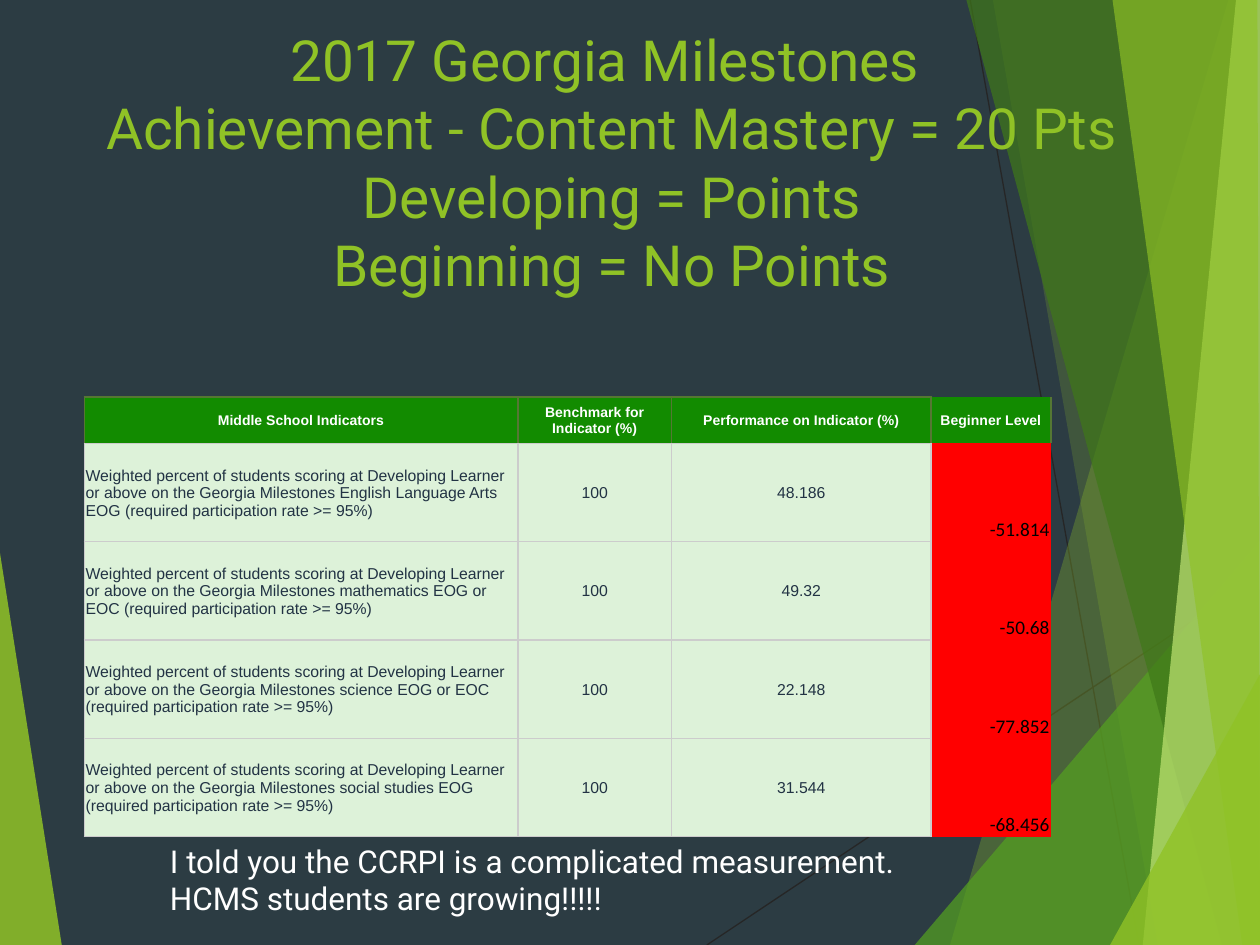
from lxml.etree import SubElement
from pptx import Presentation
from pptx.dml.color import RGBColor
from pptx.enum.shapes import MSO_CONNECTOR
from pptx.enum.text import MSO_ANCHOR, MSO_AUTO_SIZE, PP_ALIGN
from pptx.oxml import parse_xml
from pptx.oxml.ns import nsdecls, qn
from pptx.util import Inches, Pt

WIDTH, HEIGHT = 10, 7.5
BACKGROUND, LIME, WHITE = "2C3C43", "90C226", "FFFFFF"
GRID, HEADER_EDGE = "CCCCCC", "557733"

TITLE = [
    "2017 Georgia Milestones ",
    "Achievement - Content Mastery = 20 Pts",
    "Developing = Points",
    "Beginning = No Points",
]
CLOSING = ["I told you the CCRPI is a complicated measurement.", "HCMS students are growing!!!!!"]

HEADERS = ["Middle School Indicators", "Benchmark for Indicator (%)",
           "Performance on Indicator (%)", "Beginner Level"]
INDICATOR = ("Weighted percent of students scoring at Developing Learner or above on the "
             "Georgia Milestones {} (required participation rate >= 95%)")
RESULTS = [
    ("English Language Arts EOG", "100", "48.186", "-51.814"),
    ("mathematics EOG or EOC", "100", "49.32", "-50.68"),
    ("science EOG or EOC", "100", "22.148", "-77.852"),
    ("social studies EOG", "100", "31.544", "-68.456"),
]
COLUMN_WIDTHS = [3.44, 1.22, 2.06, 0.95]
ROW_HEIGHTS = [0.37] + [0.78] * len(RESULTS)

RAYS = [((5.61, HEIGHT), (WIDTH, 4.57)), ((7.7, 0), (9.04, HEIGHT))]
FACETS = [
    (LIME, 85, [(0, 4.39), (0.49, HEIGHT), (0, HEIGHT)]),
    (LIME, 30, [(9.75, 0), (7.54, HEIGHT), (WIDTH, HEIGHT), (WIDTH, 0)]),
    (LIME, 20, [(7.88, 0), (9.19, HEIGHT), (WIDTH, HEIGHT), (WIDTH, 0)]),
    ("54A021", 72, [(7.26, HEIGHT), (WIDTH, 4.29), (WIDTH, HEIGHT)]),
    ("3F7819", 70, [(7.67, 0), (9.7, HEIGHT), (WIDTH, HEIGHT), (WIDTH, 0)]),
    ("C0E474", 70, [(9.81, 0), (9.07, HEIGHT), (WIDTH, HEIGHT), (WIDTH, 0)]),
    (LIME, 65, [(8.83, 0), (9.86, HEIGHT), (WIDTH, HEIGHT), (9.98, 0)]),
    (LIME, 80, [(8.81, HEIGHT), (WIDTH, 5.35), (WIDTH, HEIGHT)]),
]


def rgb(value):
    """Turn a hex string into a colour."""
    return RGBColor.from_string(value)


def style_text(frame, font, size, color, align, bold=False):
    """Format every run of a text frame."""
    for para in frame.paragraphs:
        para.alignment = align
        for span in para.runs:
            span.font.name, span.font.size, span.font.bold = font, Pt(size), bold
            span.font.color.rgb = rgb(color)


def add_ray(slide, start, end):
    """Draw one thin background line."""
    ray = slide.shapes.add_connector(MSO_CONNECTOR.STRAIGHT, *map(Inches, start + end))
    ray.line.color.rgb, ray.line.width = rgb("262626"), Pt(0.75)
    SubElement(ray.element.spPr, qn("a:effectLst"))


def add_facet(slide, color, opacity, points):
    """Draw one translucent background polygon."""
    corners = [(Inches(x), Inches(y)) for x, y in points]
    builder = slide.shapes.build_freeform(*corners[0])
    builder.add_line_segments(corners[1:], close=True)
    facet = builder.convert_to_shape()
    facet.shadow.inherit = False
    facet.fill.solid()
    facet.fill.fore_color.rgb = rgb(color)
    facet.line.fill.background()
    tint = facet.element.spPr.find(qn("a:solidFill"))[0]
    SubElement(tint, qn("a:alpha"), val=str(opacity * 1000))


def set_borders(cell, edges):
    """Draw the given cell edges and hide the others."""
    properties = cell._tc.get_or_add_tcPr()
    for index, side in enumerate("LRTB"):
        color = edges.get(side)
        paint = f'<a:solidFill><a:srgbClr val="{color}"/></a:solidFill>' if color else "<a:noFill/>"
        properties.insert(index, parse_xml(
            f'<a:ln{side} {nsdecls("a")} w="{Pt(1)}">{paint}</a:ln{side}>'))


def cell_style(row, column):
    """Return fill, anchor, text format and borders for a table position."""
    last = column == len(HEADERS) - 1
    if row == 0:
        edges = dict.fromkeys("LR" if last else "LRT", HEADER_EDGE)
        if not last:
            edges["B"] = GRID
        return "128B00", MSO_ANCHOR.MIDDLE, ("Arial", 8, WHITE, PP_ALIGN.CENTER, True), edges
    if last:
        return "FF0000", MSO_ANCHOR.BOTTOM, ("Calibri", 11, "000000", PP_ALIGN.RIGHT), {"L": GRID}
    align = PP_ALIGN.CENTER if column else PP_ALIGN.LEFT
    return "DDF2D9", MSO_ANCHOR.MIDDLE, ("Arial", 9, "223344", align), dict.fromkeys("LRTB", GRID)


def add_results(slide):
    """Build the indicator table."""
    rows = [HEADERS] + [(INDICATOR.format(subject), *values) for subject, *values in RESULTS]
    table = slide.shapes.add_table(
        len(rows), len(HEADERS), Inches(0.67), Inches(3.15),
        Inches(sum(COLUMN_WIDTHS)), Inches(sum(ROW_HEIGHTS))).table
    for column, width in zip(table.columns, COLUMN_WIDTHS):
        column.width = Inches(width)
    for row, height in zip(table.rows, ROW_HEIGHTS):
        row.height = Inches(height)
    for r, texts in enumerate(rows):
        for c, text in enumerate(texts):
            fill, anchor, text_format, edges = cell_style(r, c)
            cell = table.cell(r, c)
            cell.text_frame.text = text
            style_text(cell.text_frame, *text_format)
            cell.vertical_anchor = anchor
            cell.margin_left = cell.margin_right = cell.margin_top = Inches(0.01)
            cell.margin_bottom = 0
            cell.fill.solid()
            cell.fill.fore_color.rgb = rgb(fill)
            set_borders(cell, edges)


def add_title(slide):
    """Fill the title placeholder and lift it above the background."""
    title = slide.shapes.title
    title.element.getparent().append(title.element)
    title.left, title.top, title.width, title.height = map(Inches, (0.67, 0.15, 8.37, 2.61))
    frame = title.text_frame
    frame.text = "\v".join(TITLE)
    frame.word_wrap, frame.auto_size = True, MSO_AUTO_SIZE.NONE
    frame.vertical_anchor = MSO_ANCHOR.TOP
    style_text(frame, "Roboto", 32.4, LIME, PP_ALIGN.CENTER)


def add_closing(slide):
    """Place the remark under the table."""
    box = slide.shapes.add_textbox(*map(Inches, (1.25, 6.63, 6.89, 0.71)))
    box.text_frame.word_wrap = True
    box.text_frame.text = "\n".join(CLOSING)
    style_text(box.text_frame, "Roboto", 18, WHITE, PP_ALIGN.LEFT)


def main():
    """Build and save the slide."""
    deck = Presentation()
    deck.slide_width, deck.slide_height = Inches(WIDTH), Inches(HEIGHT)
    page = deck.slides.add_slide(deck.slide_layouts[5])
    page.background.fill.solid()
    page.background.fill.fore_color.rgb = rgb(BACKGROUND)
    for ray in RAYS:
        add_ray(page, *ray)
    for facet in FACETS:
        add_facet(page, *facet)
    add_title(page)
    add_results(page)
    add_closing(page)
    deck.save("out.pptx")


if __name__ == "__main__":
    main()
